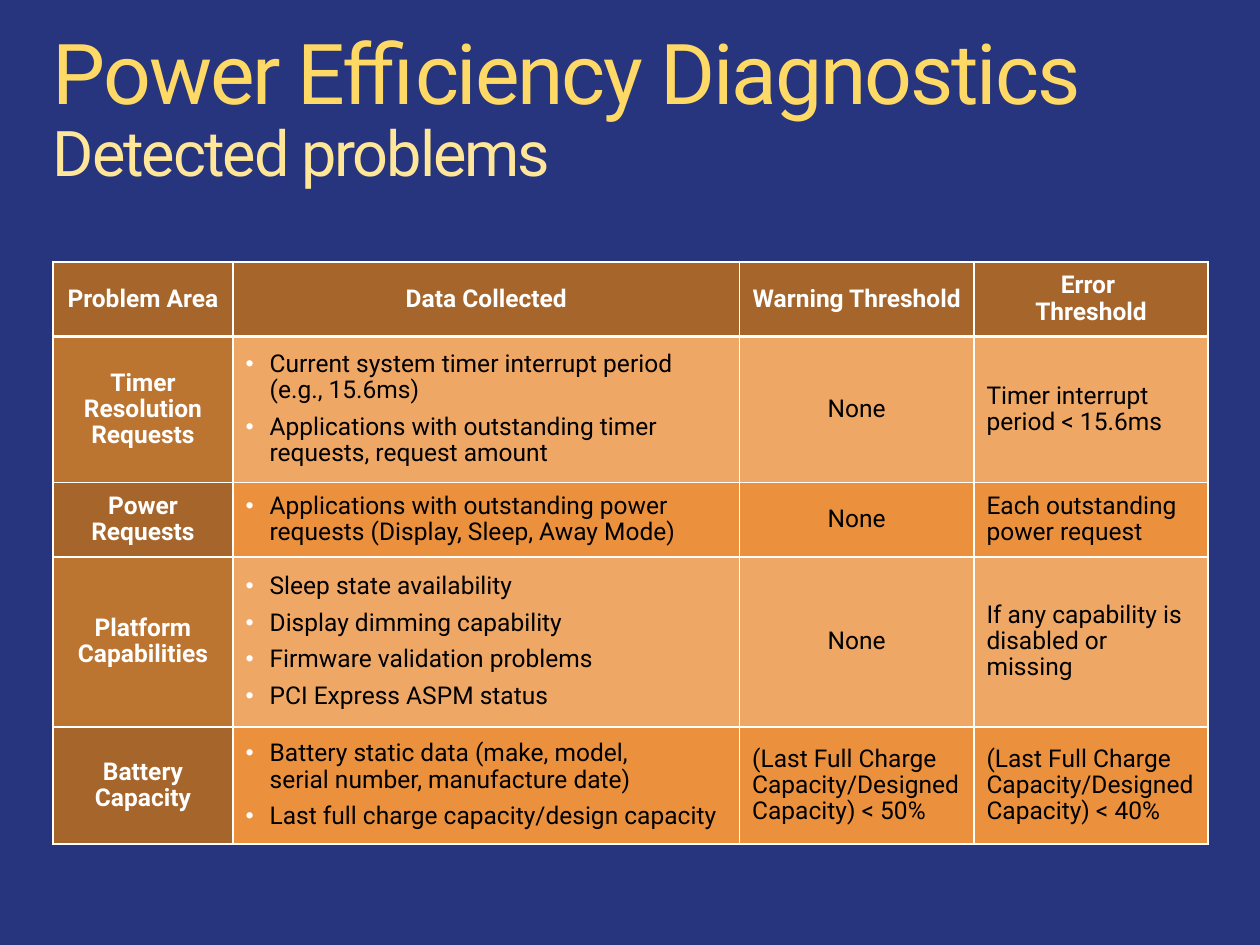
from dataclasses import dataclass

from lxml import etree
from pptx import Presentation
from pptx import util as u
from pptx.dml.color import RGBColor
from pptx.enum import text
from pptx.oxml import ns

NAVY = RGBColor(0x26, 0x35, 0x7E)
GOLD = RGBColor(0xFF, 0xD9, 0x66)
PALE_GOLD = RGBColor(0xFF, 0xE6, 0x99)
WHITE = RGBColor(0xFF, 0xFF, 0xFF)
BLACK = RGBColor(0x00, 0x00, 0x00)
DARK_BROWN = RGBColor(0xA5, 0x65, 0x2B)
BROWN = RGBColor(0xBC, 0x74, 0x31)
ORANGE = RGBColor(0xEB, 0x91, 0x3D)
LIGHT_ORANGE = RGBColor(0xEF, 0xA7, 0x65)

FONT = "Roboto"
LINE_SPACING = 0.9
COLUMN_WIDTHS = (1.43, 4.02, 1.86, 1.86)
HEADER_HEIGHT = 0.59
HEADERS = (("Problem Area",), ("Data Collected",), ("Warning Threshold",), ("Error ", "Threshold"))


@dataclass(frozen=True)
class Problem:
    area: str
    data: tuple[str, ...]
    warning: str
    error: str
    height: float


PROBLEMS = (
    Problem("Timer Resolution Requests",
            ("Current system timer interrupt period (e.g., 15.6ms)",
             "Applications with outstanding timer requests, request amount"),
            "None", "Timer interrupt period < 15.6ms", 1.16),
    Problem("Power Requests",
            ("Applications with outstanding power requests (Display, Sleep, Away Mode)",),
            "None", "Each outstanding power request", 0.59),
    Problem("Platform Capabilities",
            ("Sleep state availability", "Display dimming capability",
             "Firmware validation problems", "PCI Express ASPM status"),
            "None", "If any capability is disabled or missing", 1.35),
    Problem("Battery Capacity",
            ("Battery static data (make, model, \nserial number, manufacture date)",
             "Last full charge capacity/design capacity"),
            "(Last Full Charge Capacity/Designed Capacity) < 50%",
            "(Last Full Charge Capacity/Designed Capacity) < 40%", 0.93),
)


@dataclass(frozen=True)
class CellStyle:
    fill: RGBColor
    color: RGBColor = BLACK
    bold: bool = False
    centered: bool = False
    bulleted: bool = False


def add_run(paragraph, words: str, size: float, color: RGBColor, bold: bool = False):
    run = paragraph.add_run()
    run.text = words
    run.font.name = FONT
    run.font.size = u.Pt(size)
    run.font.bold = bold
    run.font.color.rgb = color
    return run


def add_bullet(paragraph) -> None:
    properties = paragraph._p.get_or_add_pPr()
    indent = u.Inches(0.19)
    properties.set("marL", str(indent))
    properties.set("indent", str(-indent))
    color = etree.SubElement(properties, ns.qn("a:buClr"))
    etree.SubElement(color, ns.qn("a:srgbClr"), val=str(WHITE))
    etree.SubElement(properties, ns.qn("a:buSzPct"), val="95000")
    etree.SubElement(properties, ns.qn("a:buFont"), typeface="Arial")
    etree.SubElement(properties, ns.qn("a:buChar"), char="•")


def set_borders(cell, row: int, column: int) -> None:
    """Heavy lines frame the table, the header row and the first column."""
    heavy = {
        "L": column <= 1,
        "R": column in (0, len(COLUMN_WIDTHS) - 1),
        "T": row <= 1,
        "B": row in (0, len(PROBLEMS)),
    }
    properties = cell._tc.get_or_add_tcPr()
    for position, (side, is_heavy) in enumerate(heavy.items()):
        line = etree.Element(ns.qn(f"a:ln{side}"), w=str(u.Pt(1.5 if is_heavy else 1)))
        fill = etree.SubElement(line, ns.qn("a:solidFill"))
        etree.SubElement(fill, ns.qn("a:srgbClr"), val=str(WHITE))
        properties.insert(position, line)


def fill_cell(cell, paragraphs: tuple[str, ...], style: CellStyle) -> None:
    cell.vertical_anchor = text.MSO_ANCHOR.MIDDLE
    cell.fill.solid()
    cell.fill.fore_color.rgb = style.fill
    frame = cell.text_frame
    for index, words in enumerate(paragraphs):
        paragraph = frame.add_paragraph() if index else frame.paragraphs[0]
        if style.bulleted:
            add_bullet(paragraph)
            if index:
                paragraph.space_before = u.Pt(6)
        paragraph.line_spacing = LINE_SPACING
        paragraph.alignment = text.PP_ALIGN.CENTER if style.centered else text.PP_ALIGN.LEFT
        for line_index, line in enumerate(words.split("\n")):
            if line_index:
                paragraph.add_line_break()
            add_run(paragraph, line, 14, style.color, style.bold)


def add_title(slide) -> None:
    box = slide.shapes.add_textbox(u.Inches(0.42), u.Inches(0.25), u.Inches(9.16), u.Inches(1.27))
    frame = box.text_frame
    frame.word_wrap = True
    frame.margin_left = frame.margin_right = frame.margin_top = frame.margin_bottom = 0
    paragraph = frame.paragraphs[0]
    paragraph.line_spacing = LINE_SPACING
    heading = add_run(paragraph, "Power Efficiency Diagnostics", 48, GOLD)
    paragraph.add_line_break()
    subheading = add_run(paragraph, "Detected problems", 36, PALE_GOLD)
    for run in (heading, subheading):
        run._r.get_or_add_rPr().set("spc", "-120")


def add_problem_table(slide) -> None:
    heights = (HEADER_HEIGHT, *(problem.height for problem in PROBLEMS))
    table = slide.shapes.add_table(
        len(heights), len(COLUMN_WIDTHS), u.Inches(0.42), u.Inches(2.08),
        u.Inches(sum(COLUMN_WIDTHS)), u.Inches(sum(heights))).table
    for column, width in zip(table.columns, COLUMN_WIDTHS):
        column.width = u.Inches(width)
    for row, height in zip(table.rows, heights):
        row.height = u.Inches(height)

    # Header row
    header_style = CellStyle(DARK_BROWN, WHITE, bold=True, centered=True)
    for column, words in enumerate(HEADERS):
        fill_cell(table.cell(0, column), words, header_style)

    # Problem rows, in alternating shades
    for row, problem in enumerate(PROBLEMS, start=1):
        area_fill, fill = (BROWN, LIGHT_ORANGE) if row % 2 else (DARK_BROWN, ORANGE)
        contents = (
            ((problem.area,), CellStyle(area_fill, WHITE, bold=True, centered=True)),
            (problem.data, CellStyle(fill, bulleted=True)),
            ((problem.warning,), CellStyle(fill, centered=problem.warning == "None")),
            ((problem.error,), CellStyle(fill)),
        )
        for column, (paragraphs, style) in enumerate(contents):
            fill_cell(table.cell(row, column), paragraphs, style)

    # Grid lines
    for row in range(len(heights)):
        for column in range(len(COLUMN_WIDTHS)):
            set_borders(table.cell(row, column), row, column)


def main() -> None:
    presentation = Presentation()
    presentation.slide_width = u.Inches(10)
    presentation.slide_height = u.Inches(7.5)
    slide = presentation.slides.add_slide(presentation.slide_layouts[6])
    slide.background.fill.solid()
    slide.background.fill.fore_color.rgb = NAVY
    add_title(slide)
    add_problem_table(slide)
    presentation.save("out.pptx")


if __name__ == "__main__":
    main()
